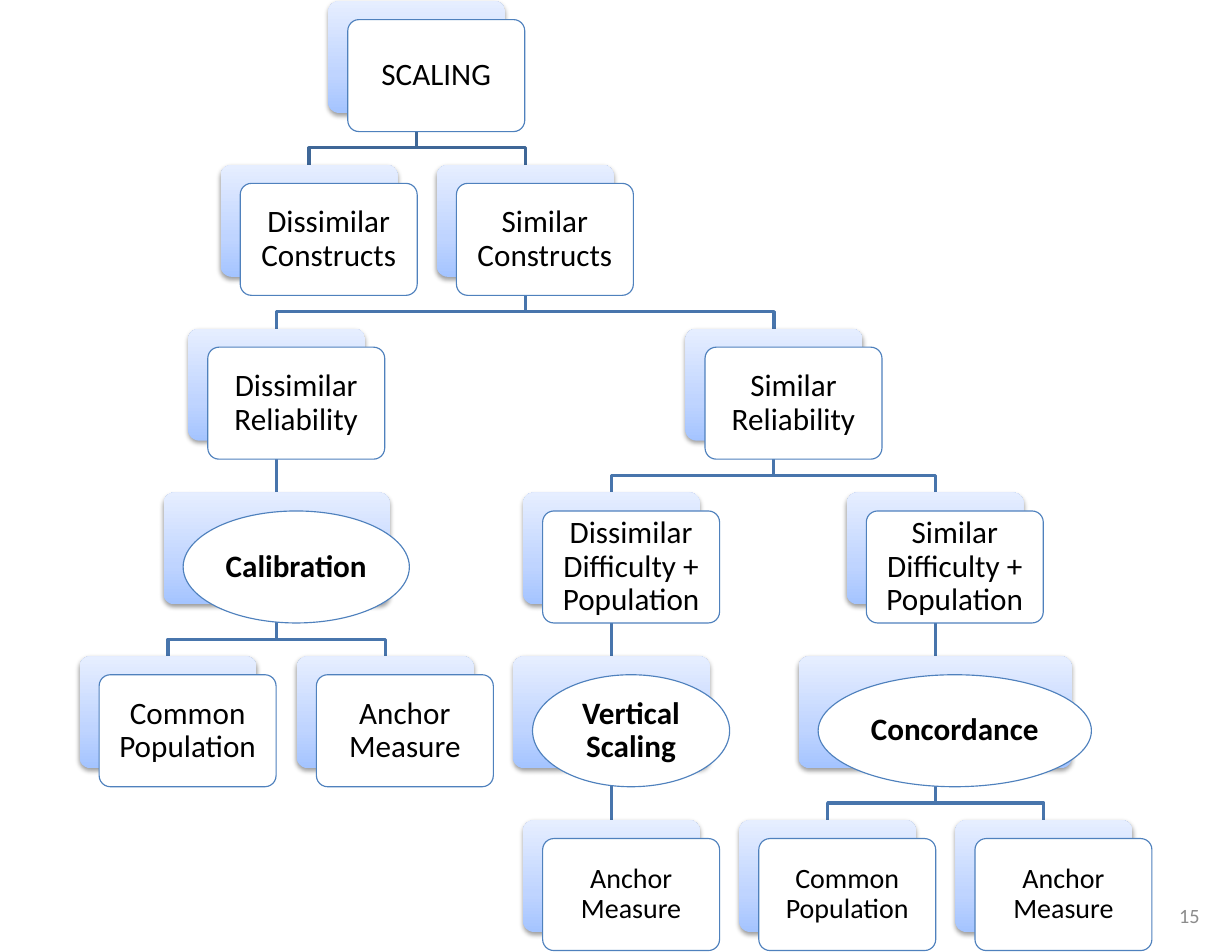
"""Build a tree slide that sorts score scaling methods by construct, reliability and difficulty."""
from copy import deepcopy
from dataclasses import dataclass
from typing import Optional

from pptx import Presentation
from pptx.dml.color import RGBColor
from pptx.enum.shapes import MSO_CONNECTOR, MSO_SHAPE
from pptx.enum.text import MSO_ANCHOR, PP_ALIGN
from pptx.oxml import parse_xml
from pptx.oxml.ns import nsdecls, qn
from pptx.util import Inches, Pt


@dataclass(frozen=True)
class Theme:
    font: str = "Calibri"
    body: float = 20
    leaf: float = 18
    number: float = 13
    text: str = "000000"
    muted: str = "8C8C8C"
    card: str = "FFFFFF"
    outline: str = "4F81BD"
    root_link: str = "3F6797"
    link: str = "4875AC"
    gradient: tuple = ((0, "A4C4FF"), (0.35, "BFD4FF"), (1, "E6EEFF"))


@dataclass(frozen=True)
class Node:
    text: str
    x: float
    level: int
    parent: Optional["Node"] = None
    w: float = 1.58
    oval: bool = False

    @property
    def top(self) -> float:
        return 0.01 + ROW * self.level


THEME = Theme()
ROW, CARD_H, BEND = 1.4625, 1, 0.31
SHIFT_X, SHIFT_Y = 0.175, 0.165


def tree() -> list[Node]:
    root = Node("SCALING", 3.72, 0)
    unlike = Node("Dissimilar Constructs", 2.76, 1, root)
    like = Node("Similar Constructs", 4.69, 1, root)
    low = Node("Dissimilar Reliability", 2.47, 2, like)
    calibration = Node("Calibration", 2.47, 3, low, 2.02, True)
    high = Node("Similar Reliability", 6.91, 2, like)
    hard = Node("Dissimilar Difficulty + Population", 5.46, 3, high)
    vertical = Node("Vertical Scaling", 5.46, 4, hard, 1.76, True)
    even = Node("Similar Difficulty + Population", 8.35, 3, high)
    concordance = Node("Concordance", 8.35, 4, even, 2.44, True)
    return [
        root, unlike, like, low, calibration,
        Node("Common Population", 1.5, 4, calibration),
        Node("Anchor Measure", 3.44, 4, calibration),
        high, hard, vertical,
        Node("Anchor Measure", 5.46, 5, vertical),
        even, concordance,
        Node("Common Population", 7.39, 5, concordance),
        Node("Anchor Measure", 9.32, 5, concordance),
    ]


def write(sp, text: str, *, size: float, color: str, bold: bool = False,
          align=PP_ALIGN.CENTER, spacing: float = 1, inset: tuple = (0.08, 0.08)) -> None:
    tf = sp.text_frame
    tf.word_wrap = True
    tf.vertical_anchor = MSO_ANCHOR.MIDDLE
    tf.margin_left = tf.margin_right = Inches(inset[0])
    tf.margin_top = tf.margin_bottom = Inches(inset[1])
    p = tf.paragraphs[0]
    p.alignment = align
    p.line_spacing = spacing
    r = p.add_run()
    r.text = text
    r.font.name = THEME.font
    r.font.size = Pt(size)
    r.font.bold = bold
    r.font.color.rgb = RGBColor.from_string(color)


def draw_link(s, node: Node) -> None:
    start, end = node.parent.top + CARD_H, node.top
    x0, x1 = node.parent.x, node.x
    if x0 == x1:
        sp = s.shapes.add_connector(MSO_CONNECTOR.STRAIGHT, Inches(x0), Inches(start),
                                    Inches(x1), Inches(end))
        sp._element.spPr.append(parse_xml(f"<a:effectLst {nsdecls('a')}/>"))
    else:
        fb = s.shapes.build_freeform(Inches(x0), Inches(start))
        turns = ((x0, start + BEND), (x1, start + BEND), (x1, end))
        fb.add_line_segments([(Inches(x), Inches(y)) for x, y in turns], close=False)
        sp = fb.convert_to_shape()
        sp.fill.background()
        sp.shadow.inherit = False
    sp.line.width = Pt(2)
    color = THEME.link if node.parent.parent else THEME.root_link
    sp.line.color.rgb = RGBColor.from_string(color)


def add_card(s, kind, x: float, y: float, w: float):
    sp = s.shapes.add_shape(kind, Inches(x), Inches(y), Inches(w), Inches(CARD_H))
    if kind == MSO_SHAPE.ROUNDED_RECTANGLE:
        sp.adjustments[0] = 0.1
    sp.shadow.inherit = False
    return sp


def draw_back(s, node: Node) -> None:
    sp = add_card(s, MSO_SHAPE.ROUNDED_RECTANGLE, node.x - node.w / 2, node.top, node.w)
    sp.line.fill.background()
    sp.fill.gradient()
    sp.fill.gradient_angle = 90
    stops = sp._element.spPr.find(qn("a:gradFill")).find(qn("a:gsLst"))
    stops.append(deepcopy(stops[0]))
    for stop, (position, color) in zip(sp.fill.gradient_stops, THEME.gradient):
        stop.position = position
        stop.color.rgb = RGBColor.from_string(color)
    sp._element.spPr.find(qn("a:effectLst")).append(parse_xml(
        f'<a:outerShdw {nsdecls("a")} blurRad="{Pt(3.1)}" dist="{Pt(1.6)}" dir="5400000" '
        'rotWithShape="0"><a:srgbClr val="000000"><a:alpha val="38000"/></a:srgbClr>'
        '</a:outerShdw>'))


def draw_node(s, node: Node) -> None:
    draw_back(s, node)
    kind = MSO_SHAPE.OVAL if node.oval else MSO_SHAPE.ROUNDED_RECTANGLE
    sp = add_card(s, kind, node.x - node.w / 2 + SHIFT_X, node.top + SHIFT_Y, node.w)
    sp.fill.solid()
    sp.fill.fore_color.rgb = RGBColor.from_string(THEME.card)
    sp.line.color.rgb = RGBColor.from_string(THEME.outline)
    sp.line.width = Pt(0.75)
    size = THEME.leaf if node.level == 5 else THEME.body
    write(sp, node.text, size=size, color=THEME.text, bold=node.oval, spacing=0.9)


def main() -> None:
    prs = Presentation()
    prs.slide_width, prs.slide_height = Inches(11), Inches(8.5)
    s = prs.slides.add_slide(prs.slide_layouts[6])
    nodes = tree()
    for node in nodes:
        if node.parent:
            draw_link(s, node)
    for node in nodes:
        draw_node(s, node)
    number = s.shapes.add_textbox(Inches(8.25), Inches(7.95), Inches(2.57), Inches(0.45))
    write(number, "15", size=THEME.number, color=THEME.muted, align=PP_ALIGN.RIGHT,
          inset=(0.11, 0.06))
    prs.save("out.pptx")


if __name__ == "__main__":
    main()
